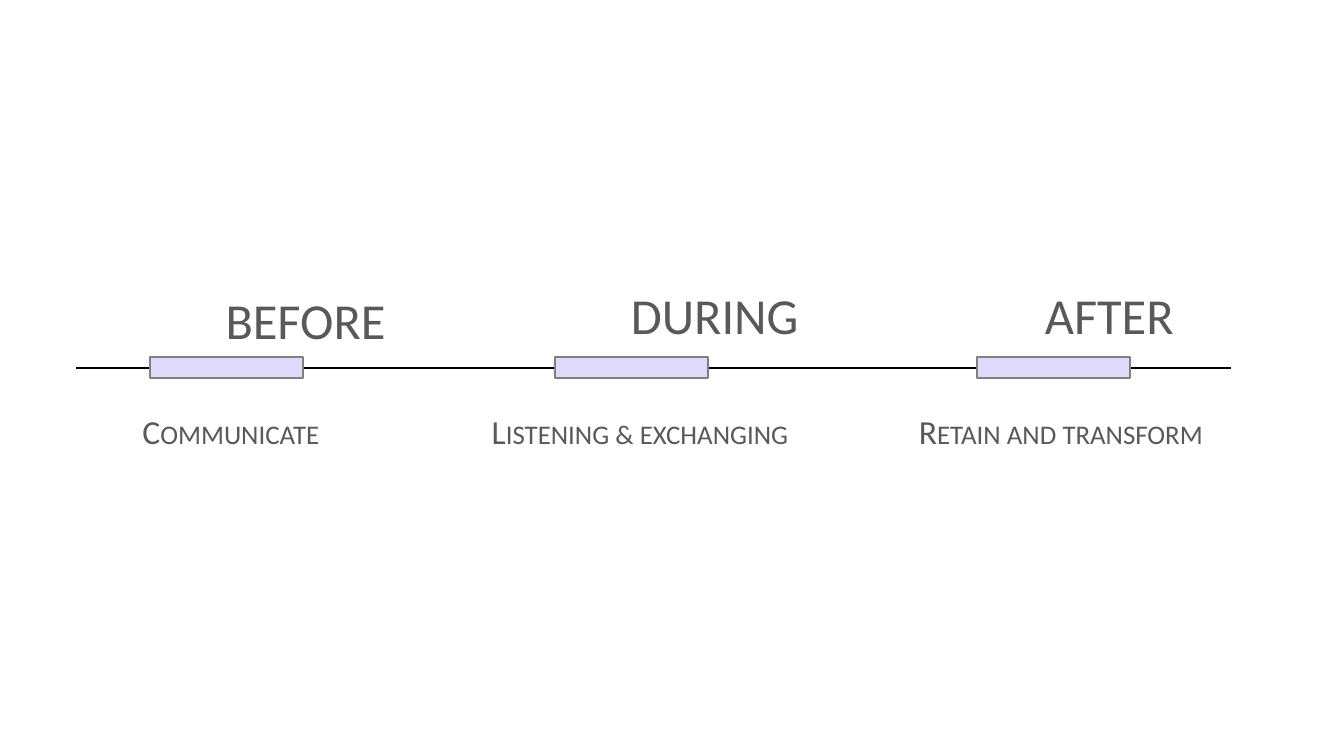
import pptx
import pptx.dml.color
import pptx.enum.shapes
import pptx.enum.text
import pptx.oxml
import pptx.oxml.ns
import pptx.util
from dataclasses import dataclass


@dataclass(frozen=True)
class Theme:
    font: str = "Calibri"
    text: str = "595959"
    axis: str = "000000"
    bar_fill: str = "DFDAFB"
    bar_line: str = "808080"
    phase_size: int = 36
    caption_size: int = 24
    line_width: int = 1


theme = Theme()
rgb = pptx.dml.color.RGBColor.from_string
SLIDE_WIDTH, SLIDE_HEIGHT = 1344, 756
EMU_PER_PX = 12192000 / SLIDE_WIDTH


def px(length):
    return pptx.util.Emu(round(length * EMU_PER_PX))


def add_label(shapes, text, left, top, width, height, size):
    """Add a centred small-caps label."""
    label = shapes.add_textbox(px(left), px(top), px(width), px(height))
    frame = label.text_frame
    frame.word_wrap = True
    frame.auto_size = pptx.enum.text.MSO_AUTO_SIZE.SHAPE_TO_FIT_TEXT
    paragraph = frame.paragraphs[0]
    paragraph.text = text
    paragraph.alignment = pptx.enum.text.PP_ALIGN.CENTER
    paragraph.font.name = theme.font
    paragraph.font.size = pptx.util.Pt(size)
    paragraph.font.color.rgb = rgb(theme.text)
    paragraph._p.pPr.find(pptx.oxml.ns.qn("a:defRPr")).set("cap", "small")


presentation = pptx.Presentation()
presentation.slide_width = px(SLIDE_WIDTH)
presentation.slide_height = px(SLIDE_HEIGHT)
slide = presentation.slides.add_slide(presentation.slide_layouts[6])
timeline = slide.shapes.add_group_shape().shapes

AXIS_Y = 368
axis = timeline.add_connector(
    pptx.enum.shapes.MSO_CONNECTOR.STRAIGHT, px(76), px(AXIS_Y), px(1231), px(AXIS_Y))
axis.line.color.rgb = rgb(theme.axis)
axis.line.width = pptx.util.Pt(theme.line_width)
axis._element.spPr.append(pptx.oxml.parse_xml(
    f'<a:effectLst {pptx.oxml.ns.nsdecls("a")}/>'))

for bar_left in (150, 555, 977):
    bar = timeline.add_shape(
        pptx.enum.shapes.MSO_SHAPE.RECTANGLE, px(bar_left), px(357), px(153), px(21))
    bar.shadow.inherit = False
    bar.fill.solid()
    bar.fill.fore_color.rgb = rgb(theme.bar_fill)
    bar.line.color.rgb = rgb(theme.bar_line)
    bar.line.width = pptx.util.Pt(theme.line_width)

for phase, left, top, width in (
    ("BEFORE", 29, 284, 393),
    ("DURING", 429, 279, 404),
    ("AFTER", 843, 279, 404),
):
    add_label(timeline, phase, left, top, width, 72, theme.phase_size)

for caption, left in (
    ("Communicate", 29),
    ("Listening & exchanging", 438),
    ("Retain and transform", 859),
):
    add_label(slide.shapes, caption, left, 406, 404, 50, theme.caption_size)

presentation.save("out.pptx")
